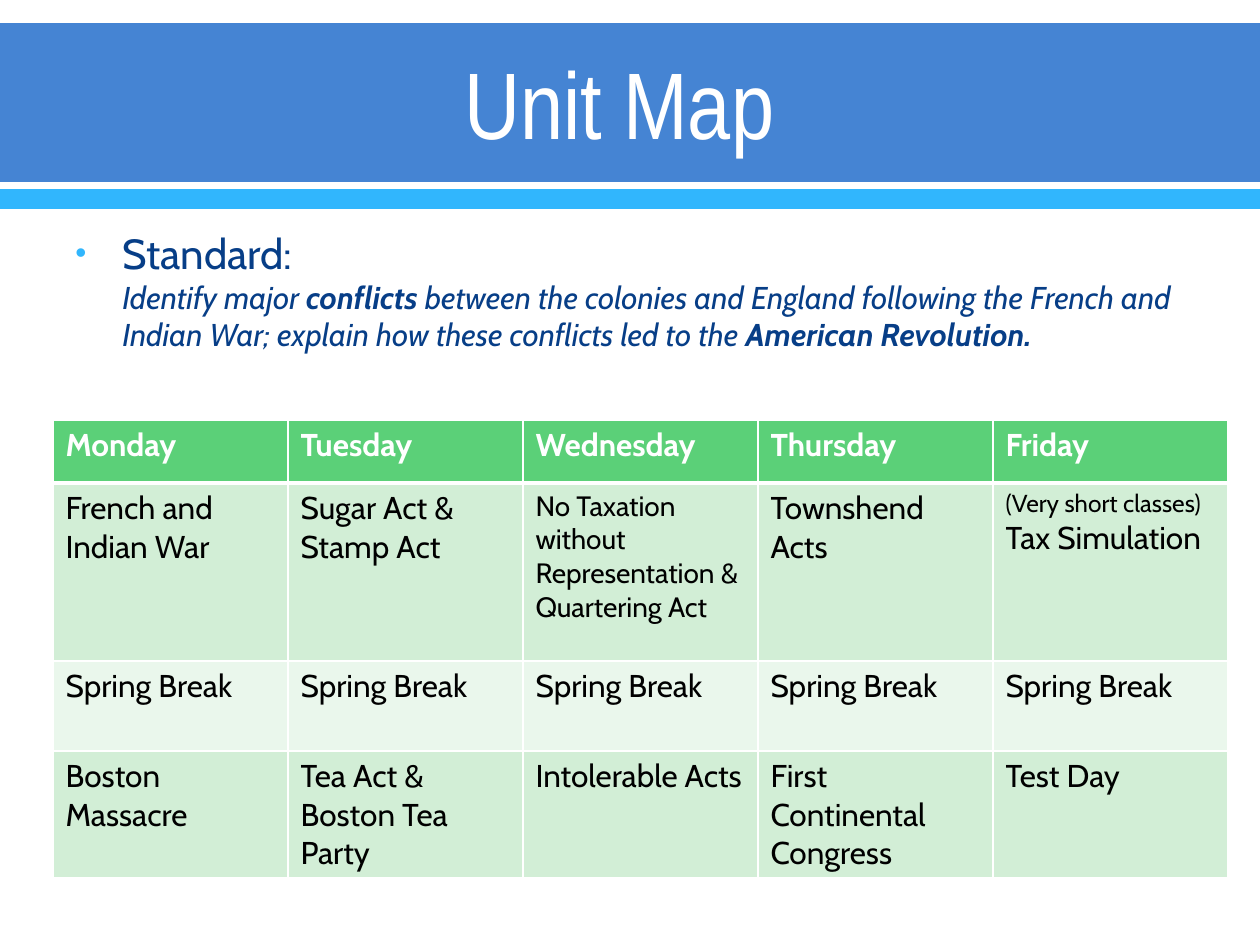
from dataclasses import dataclass

from lxml import etree
from pptx import Presentation
from pptx.dml.color import RGBColor
from pptx.enum.shapes import MSO_SHAPE
from pptx.enum.text import MSO_ANCHOR, PP_ALIGN
from pptx.oxml.ns import qn
from pptx.util import Emu, Pt

RECTANGLE = MSO_SHAPE.RECTANGLE
MIDDLE = MSO_ANCHOR.MIDDLE
CENTER = PP_ALIGN.CENTER
PX = 914400 // 126


@dataclass(frozen=True)
class Theme:
    title_font: str = "Arial Narrow"
    body_font: str = "Cabin"
    white: str = "FFFFFF"
    black: str = "000000"
    banner: str = "4584D3"
    accent: str = "31B6FD"
    navy: str = "073E87"
    header: str = "5BD078"
    bands: tuple = ("D2EED6", "EAF7EC")
    title_size: int = 54
    heading_size: int = 24
    text_size: int = 18
    compact_size: int = 16
    note_size: int = 14


THEME = Theme()

TITLE = "Unit Map "
HEADING = "Standard:"
STANDARD = [
    ("Identify major ", False),
    ("conflicts", True),
    (" between the colonies and England following the French and Indian War; "
     "explain how these conflicts led to the ", False),
    ("American Revolution.", True),
]
DAYS = ["Monday", "Tuesday", "Wednesday", "Thursday", "Friday"]
WEEKS = [
    ["French and Indian War", "Sugar Act & Stamp Act",
     "No Taxation without Representation & Quartering Act",
     "Townshend Acts", "(Very short classes)\nTax Simulation"],
    ["Spring Break"] * len(DAYS),
    ["Boston Massacre", "Tea Act & Boston Tea Party", "Intolerable Acts",
     "First Continental Congress", "Test Day"],
]
SPECIAL_SIZES = {
    "No Taxation without Representation & Quartering Act": THEME.compact_size,
    "(Very short classes)": THEME.note_size,
}

BANDS = [(23, 159, THEME.banner), (189, 20, THEME.accent)]
TITLE_BOX = (63, 25, 1134, 154)
STANDARD_BOX = (63, 221, 1134, 624)
BULLET_INDENT = 47
TABLE_LEFT, TABLE_TOP, DAY_WIDTH = 53, 420, 235
ROW_HEIGHTS = [63, 178, 90, 127]


def px(*lengths):
    return [Emu(length * PX) for length in lengths]


def style(font, name, size, color, bold=None):
    font.name = name
    font.size = Pt(size)
    font.color.rgb = RGBColor.from_string(color)
    font.bold = bold


def add_text_frame(slide, box):
    frame = slide.shapes.add_textbox(*px(*box)).text_frame
    frame.word_wrap = True
    return frame


def add_bullet(paragraph):
    properties = paragraph._p.get_or_add_pPr()
    properties.set("marL", str(BULLET_INDENT * PX))
    properties.set("indent", str(-BULLET_INDENT * PX))
    bullet = [
        etree.Element(qn("a:buClr")),
        etree.Element(qn("a:buSzPct"), val="75000"),
        etree.Element(qn("a:buFont"), typeface="Arial"),
        etree.Element(qn("a:buChar"), char="•"),
    ]
    etree.SubElement(bullet[0], qn("a:srgbClr"), val=THEME.accent)
    defaults = properties.find(qn("a:defRPr"))
    for element in bullet:
        defaults.addprevious(element)


def add_borders(cell, widths):
    properties = cell._tc.get_or_add_tcPr()
    for position, (side, width) in enumerate(widths.items()):
        line = etree.Element(qn(f"a:ln{side}"), w=str(Pt(width)))
        fill = etree.SubElement(line, qn("a:solidFill"))
        etree.SubElement(fill, qn("a:srgbClr"), val=THEME.white)
        properties.insert(position, line)


def add_banner(slide):
    for top, height, color in BANDS:
        band = slide.shapes.add_shape(RECTANGLE, *px(0, top, 1260, height))
        band.shadow.inherit = False
        band.fill.solid()
        band.fill.fore_color.rgb = RGBColor.from_string(color)
        band.line.fill.background()
    frame = add_text_frame(slide, TITLE_BOX)
    frame.vertical_anchor = MIDDLE
    title = frame.paragraphs[0]
    title.text = TITLE
    title.alignment = CENTER
    style(title.font, THEME.title_font, THEME.title_size, THEME.white)


def add_standard(slide):
    paragraph = add_text_frame(slide, STANDARD_BOX).paragraphs[0]
    style(paragraph.font, THEME.body_font, THEME.heading_size, THEME.navy)
    paragraph.space_before = Pt(5)
    add_bullet(paragraph)
    paragraph.add_run().text = HEADING
    paragraph.add_line_break()
    for text, bold in STANDARD:
        run = paragraph.add_run()
        run.text = text
        run.font.size = Pt(THEME.text_size)
        run.font.italic = True
        run.font.bold = bold


def add_schedule(slide):
    rows = [DAYS, *WEEKS]
    frame = slide.shapes.add_table(
        len(rows), len(DAYS),
        *px(TABLE_LEFT, TABLE_TOP, DAY_WIDTH * len(DAYS), sum(ROW_HEIGHTS)))
    table = frame.table
    for column in table.columns:
        column.width = Emu(DAY_WIDTH * PX)
    for index, (height, entries) in enumerate(zip(ROW_HEIGHTS, rows)):
        table.rows[index].height = Emu(height * PX)
        is_header = index == 0
        fill = THEME.header if is_header else THEME.bands[(index - 1) % 2]
        color = THEME.white if is_header else THEME.black
        borders = {"L": 1, "R": 1, "T": 3 if index == 1 else 1,
                   "B": 3 if is_header else 1}
        for cell, entry in zip(table.rows[index].cells, entries):
            cell.text = entry
            cell.fill.solid()
            cell.fill.fore_color.rgb = RGBColor.from_string(fill)
            add_borders(cell, borders)
            for paragraph in cell.text_frame.paragraphs:
                size = SPECIAL_SIZES.get(paragraph.text, THEME.text_size)
                style(paragraph.font, THEME.body_font, size, color, is_header)


def main():
    deck = Presentation()
    deck.slide_width, deck.slide_height = px(1260, 945)
    slide = deck.slides.add_slide(deck.slide_layouts[6])
    add_banner(slide)
    add_standard(slide)
    add_schedule(slide)
    deck.save("out.pptx")


if __name__ == "__main__":
    main()
